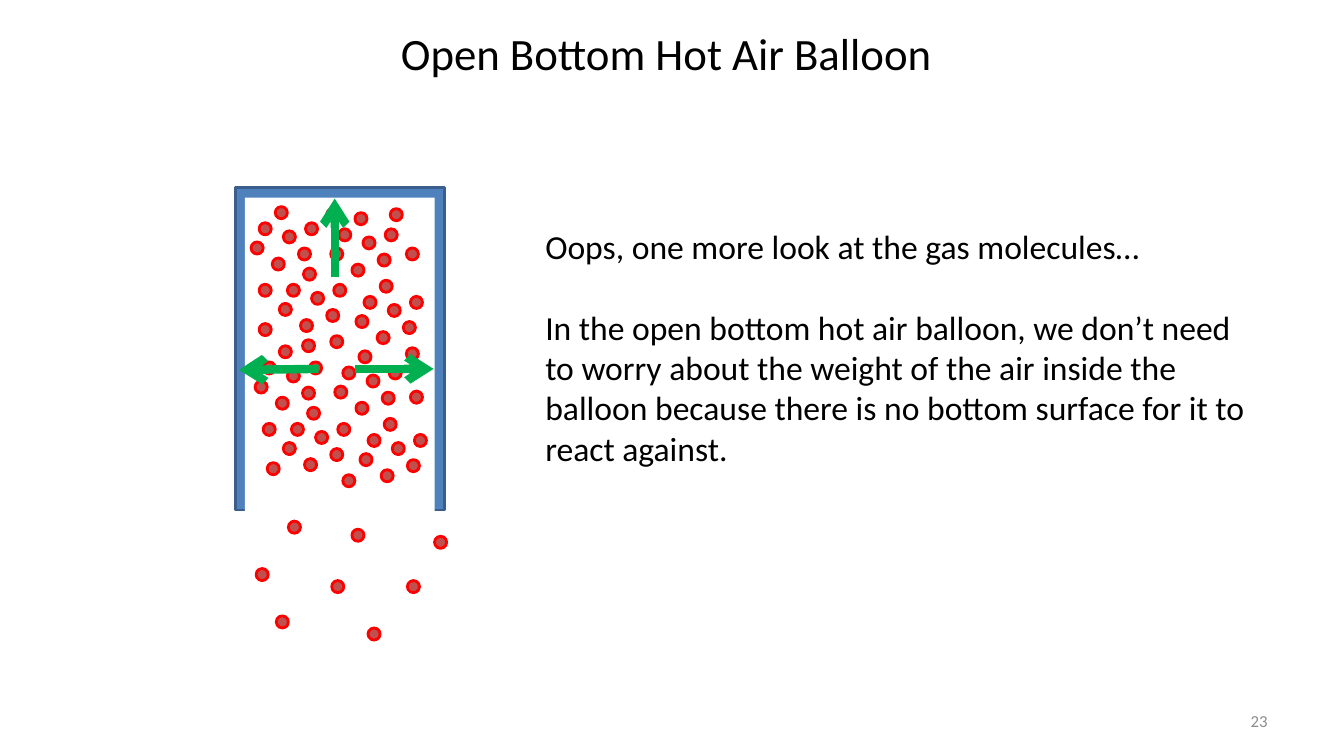
from pptx import Presentation
from pptx.dml.color import RGBColor
from pptx.enum.shapes import MSO_CONNECTOR as Conn, MSO_SHAPE as Shape
from pptx.enum.text import MSO_ANCHOR as Anchor, PP_ALIGN as Align
from pptx.oxml.ns import qn
from pptx.util import Inches, Pt
from lxml.etree import SubElement


def style(frame, size, color, align):
    frame.word_wrap = True
    for para in frame.paragraphs:
        para.alignment = align
        for run in para.runs:
            run.font.name = "Calibri"
            run.font.size = Pt(size)
            run.font.color.rgb = RGBColor.from_string(color)


def draw(group, kind, box, fill, line):
    shape = group.shapes.add_shape(kind, *map(Inches, box))
    shape.shadow.inherit = False
    shape.fill.solid()
    shape.fill.fore_color.rgb = RGBColor.from_string(fill)
    if line:
        shape.line.color.rgb = RGBColor.from_string(line)
        shape.line.width = Pt(2)
    else:
        shape.line.fill.background()


deck = Presentation()
deck.slide_width = Inches(13.33)
deck.slide_height = Inches(7.5)
slide = deck.slides.add_slide(deck.slide_layouts[5])

title = slide.shapes.title
title.left, title.top = Inches(2.34), Inches(0.21)
title.width, title.height = Inches(8.54), Inches(0.64)
title.text_frame.text = "Open Bottom Hot Air Balloon"
title.text_frame.vertical_anchor = Anchor.TOP
style(title.text_frame, 32, "000000", Align.CENTER)

number = slide.shapes.add_textbox(Inches(9.56), Inches(6.95), Inches(3.11), Inches(0.4))
number.text_frame.text = "23"
number.text_frame.vertical_anchor = Anchor.MIDDLE
style(number.text_frame, 12, "8C8C8C", Align.RIGHT)

body = slide.shapes.add_textbox(Inches(5.31), Inches(2.19), Inches(7.22), Inches(2.52))
body.text_frame.text = "Oops, one more look at the gas molecules…"
para = body.text_frame.add_paragraph()
para.text = (
    "In the open bottom hot air balloon, we don’t need to worry about the weight "
    "of the air inside the balloon because there is no bottom surface for it to "
    "react against."
)
para.space_before = Pt(29)
style(body.text_frame, 24, "000000", Align.LEFT)

balloon = slide.shapes.add_group_shape()
draw(balloon, Shape.RECTANGLE, (2.34, 1.86, 2.07, 3.2), "4F81BD", "3A5F8C")
draw(balloon, Shape.RECTANGLE, (2.43, 1.96, 1.88, 3.17), "FFFFFF", None)

cluster = [(0, 0), (0.24, 0.08), (0.39, 0.25), (0.46, 0),
           (0.16, -0.16), (-0.08, 0.19), (0.13, 0.35)]
starts = [(3.36, 2.27), (3.61, 2.94), (2.85, 2.82), (2.57, 2.21),
          (3.4, 3.64), (3.65, 4.31), (2.89, 4.2), (2.61, 3.59)]
single = [(2.57, 2.82), (2.57, 3.21), (2.61, 4.2), (3.28, 3.33), (4.03, 3.45),
          (3.24, 2.07), (3.87, 2.07), (4.07, 3.88), (4.03, 2.46), (2.65, 4.59),
          (3.4, 4.71), (3, 3.37)]
escaped = [(3.49, 5.25), (4.04, 5.76), (3.29, 5.76), (2.54, 5.64),
           (2.86, 5.17), (4.31, 5.32), (2.74, 6.11), (3.65, 6.23)]
packed = [(x + dx, y + dy) for x, y in starts for dx, dy in cluster]
for x, y in packed + single + escaped:
    draw(balloon, Shape.OVAL, (x, y, 0.12, 0.12), "C0504D", "FF0000")

for ends in [(3.52, 3.66, 4.3, 3.66), (3.16, 3.66, 2.37, 3.67), (3.32, 2.75, 3.32, 1.97)]:
    force = balloon.shapes.add_connector(Conn.STRAIGHT, *map(Inches, ends))
    force.line.color.rgb = RGBColor.from_string("00B050")
    force.line.width = Pt(6)
    SubElement(force.line._get_or_add_ln(), qn("a:tailEnd"), type="arrow")
    SubElement(force._element.spPr, qn("a:effectLst"))

deck.save("out.pptx")
